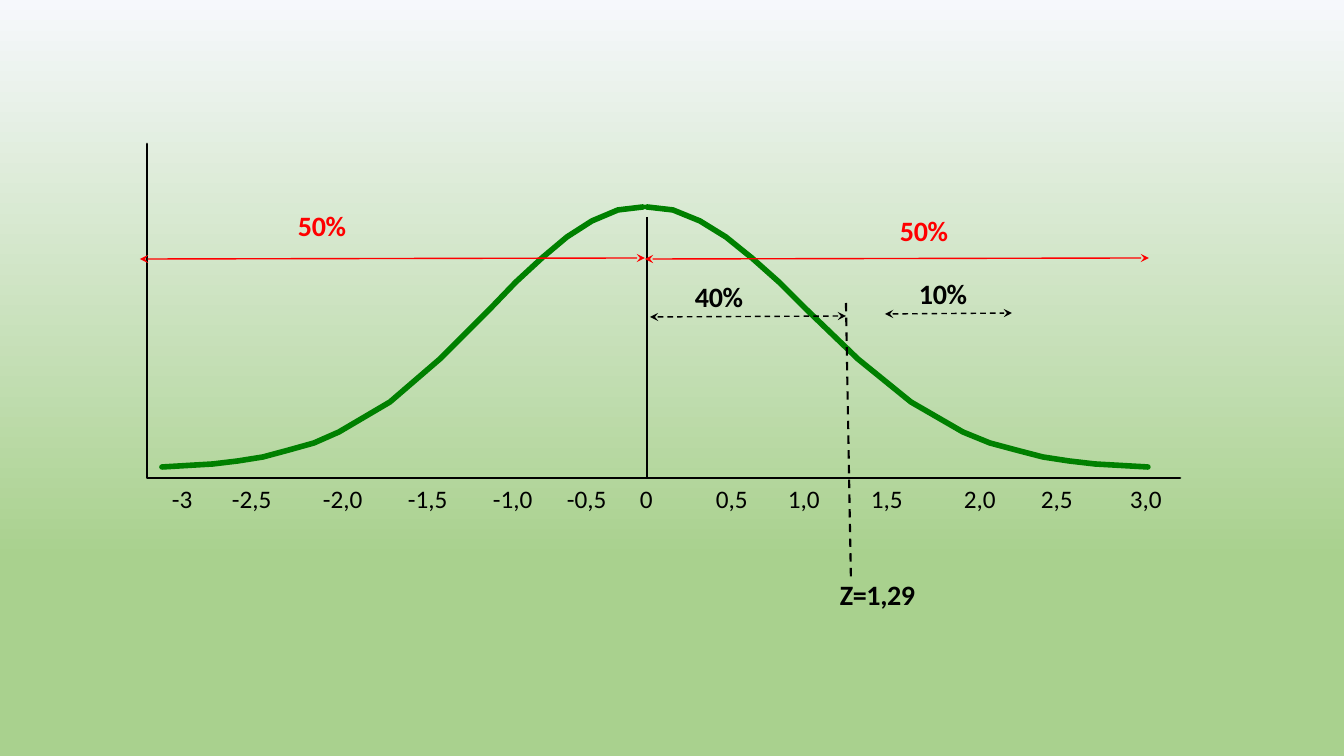
import copy

import pptx
import pptx.dml.color
import pptx.enum.dml
import pptx.enum.shapes
import pptx.oxml
import pptx.oxml.ns
import pptx.util

PX = 9144000 / 1008
BLACK, RED, GREEN = "000000", "FF0000", "008000"
STEPS = [0, 2, 3, 4, 5, 6, 7, 9, 11, 13, 14, 15, 16, 17, 18, 19]
RISES = [0, 3, 6, 10, 17, 24, 35, 65, 108, 159, 185, 209, 230, 246, 257, 260]


def px(num):
    """Turn pixels into EMU."""
    return pptx.util.Emu(round(num * PX))


def hue(code):
    """Turn a hex string into a colour."""
    return pptx.dml.color.RGBColor.from_string(code)


def add_xml(base, tag, **attrs):
    """Append a drawing element to base and return it."""
    part = pptx.oxml.parse_xml(f"<a:{tag} {pptx.oxml.ns.nsdecls('a')}/>")
    for key, val in attrs.items():
        part.set(key, str(val))
    base.append(part)
    return part


def paint(slide):
    """Fill the background from pale blue down to green."""
    fill = slide.background.fill
    fill.gradient()
    fill.gradient_angle = 270
    for stop, code, spot in zip(fill.gradient_stops, ["F6F8FC", "A9D18E"], [0, 0.74]):
        stop.color.rgb = hue(code)
        stop.position = spot
    stops = slide._element.find(".//" + pptx.oxml.ns.qn("a:gsLst"))
    last = copy.deepcopy(stops[-1])
    last.set("pos", "100000")
    stops.append(last)


def trace(slide, points, code, width):
    """Draw an open outline through the points."""
    form = slide.shapes.build_freeform(*points[0], scale=PX)
    form.add_line_segments(points[1:], close=False)
    shape = form.convert_to_shape()
    shape.shadow.inherit = False
    shape.fill.background()
    shape.line.color.rgb = hue(code)
    shape.line.width = pptx.util.Pt(width)
    line = shape.line._get_or_add_ln()
    line.set("cap", "rnd")
    add_xml(line, "round")


def rule(slide, ends, code=BLACK, width=1, dash=False, heads=False):
    """Draw a straight line, dashed or with two arrowheads if asked."""
    link = slide.shapes.add_connector(
        pptx.enum.shapes.MSO_CONNECTOR.STRAIGHT, *[px(num) for num in ends])
    link.line.color.rgb = hue(code)
    link.line.width = pptx.util.Pt(width)
    if dash:
        link.line.dash_style = pptx.enum.dml.MSO_LINE.DASH
    if heads:
        for tag in ("headEnd", "tailEnd"):
            add_xml(link.line._get_or_add_ln(), tag, type="stealth")
    add_xml(link._element.spPr, "effectLst")


def write(slide, box, text, size, code=BLACK, bold=False):
    """Add a text box and return its frame."""
    frame = slide.shapes.add_textbox(*[px(num) for num in box]).text_frame
    frame.word_wrap = True
    para = frame.paragraphs[0]
    para.text = text
    para.font.name = "Calibri"
    para.font.size = pptx.util.Pt(size)
    para.font.bold = bold
    para.font.color.rgb = hue(code)
    return frame


def label(slide, left, top, text, code=BLACK):
    """Place a bold value without margins."""
    frame = write(slide, (left, top, 84, 36), text, 20, code, True)
    frame.margin_left = frame.margin_right = frame.margin_bottom = 0
    frame.margin_top = px(1)
    para = frame.paragraphs[0]
    para.space_before = pptx.util.Pt(0.9)
    para._p.get_or_add_pPr().set("marL", str(px(1)))
    para.runs[0].font._element.set("spc", "-30")


def scale(slide, left, top, width, marks, tabs):
    """Write axis values at tab stops counted from the first value."""
    frame = write(slide, (left, top, width, 40), "\t".join(marks), 18)
    props = frame.paragraphs[0]._p.get_or_add_pPr()
    stops = pptx.oxml.parse_xml(f"<a:tabLst {pptx.oxml.ns.nsdecls('a')}/>")
    for tab in tabs:
        add_xml(stops, "tab", pos=px(tab), algn="l")
    props.insert_element_before(stops, "a:defRPr", "a:extLst")


def curve(slide, left, top, width, height):
    """Draw the axes, the two halves of the bell and the axis values."""
    base = top + height
    trace(slide, [(left, top), (left, base), (left + width, base)], BLACK, 2)
    for foot, peak in ((left + 1001, left + 500), (left + 15, left + 496)):
        points = [(round(foot + (peak - foot) * step / STEPS[-1]), base - 11 - rise)
                  for step, rise in zip(STEPS, RISES)]
        trace(slide, points, GREEN, 4)
    rule(slide, (left + 500, top + 73, left + 500, base))
    scale(slide, left + 15, base, 544,
          ["-3", "-2,5", "-2,0", "-1,5", "-1,0", "-0,5", "0"],
          [60, 151, 236, 321, 395, 468])
    scale(slide, left + 559, base, 497,
          ["0,5", "1,0", "1,5", "2,0", "2,5", "3,0"],
          [72, 155, 248, 325, 414])


def spans(slide, left, top):
    """Mark the shares under the curve and the z value."""
    mid = left + 505
    for start, end, mark, rise in ((left, mid, 157, 50), (mid, left + 1009, 759, 46)):
        rule(slide, (start, top + 1, end, top), RED, heads=True)
        label(slide, left + mark, top - rise, "50%", RED)
    for start, end, drop, mark, text in ((510, 706, 59, 554, "40%"),
                                         (745, 872, 56, 778, "10%")):
        rule(slide, (left + start, top + drop, left + end, top + drop - 1),
             dash=True, heads=True)
        label(slide, left + mark, top + drop - 39, text)
    rule(slide, (left + 706, top + 45, left + 711, top + 324), width=1.5, dash=True)
    label(slide, left + 699, top + 319, "Z=1,29")


def main():
    """Build the slide and save it."""
    deck = pptx.Presentation()
    deck.slide_width, deck.slide_height = px(1344), px(756)
    slide = deck.slides.add_slide(deck.slide_layouts[6])
    paint(slide)
    curve(slide, 147, 144, 1033, 334)
    spans(slide, 140, 258)
    deck.save("out.pptx")


if __name__ == "__main__":
    main()
